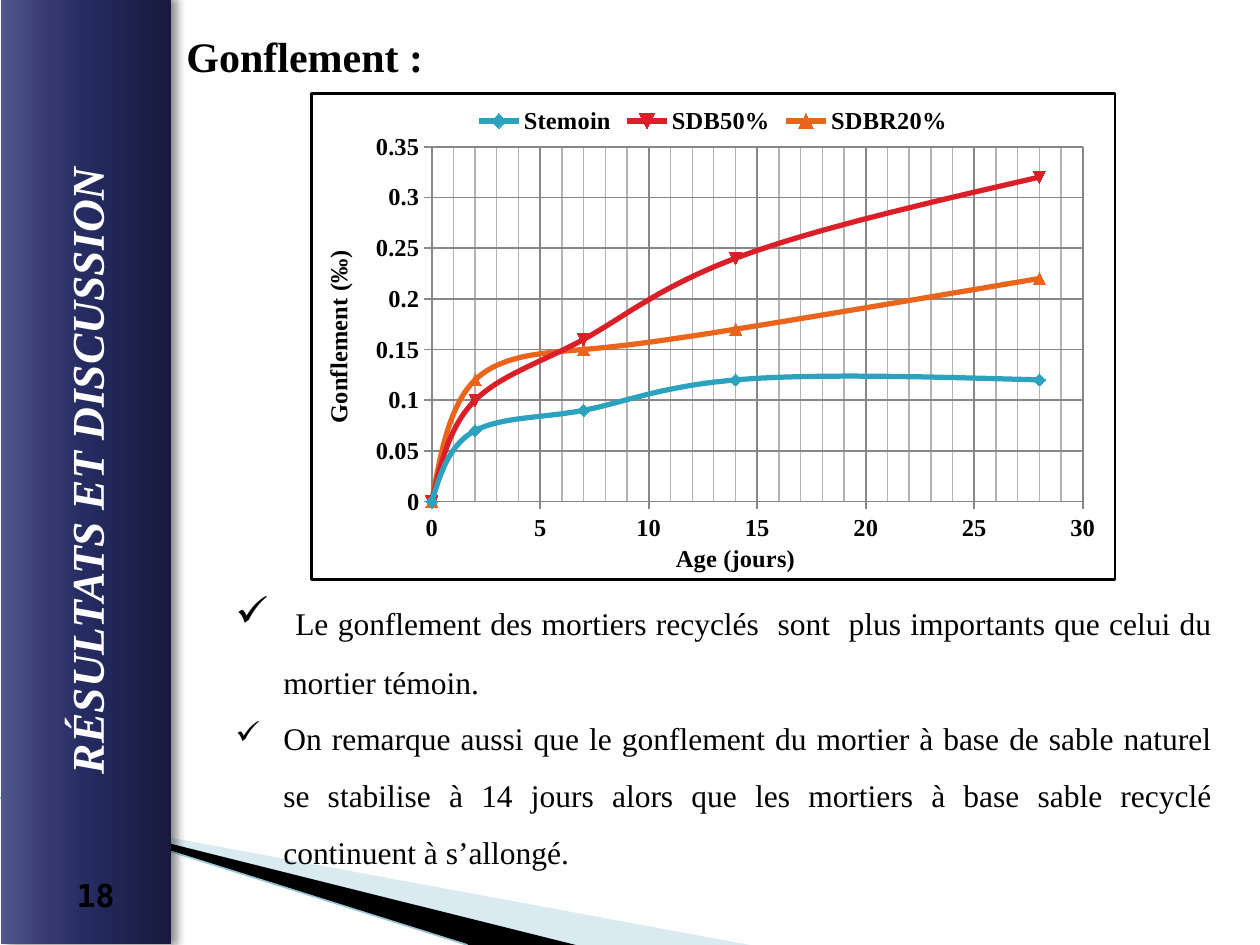
from lxml import etree
from pptx import Presentation, oxml, util as u
from pptx.chart import data
from pptx.dml import color
from pptx.enum import chart as ch, shapes, text
from pptx.oxml import ns

THEME = {
    "font": "Times New Roman", "mono": "DejaVu Sans Mono",
    "black": "000000", "white": "FFFFFF", "pale": "A0CBDC", "edge": "97C5D8",
    "grid": "878787", "minor": "B3B3B3",
    "banner": [(0, "51568D"), (30, "353970"), (50, "262B61"), (100, "171A3D")],
    "banner_pt": 26, "title_pt": 24, "chart_pt": 14, "body_pt": 18,
}
rgb = color.RGBColor.from_string
Inches = u.Inches


def add_run(p, words, size, name="black", font="font", bold=False, italic=False):
    r = p.add_run()
    r.text = words
    f = r.font
    f.name, f.size, f.bold, f.italic = THEME[font], u.Pt(size), bold, italic
    f.color.rgb = rgb(THEME[name])


def add_xml(parent, xml):
    """Append a fragment whose root tag carries no namespace declarations."""
    tag, rest = xml.split(">", 1)
    closed = tag.endswith("/")
    tag = tag.rstrip("/") + " " + ns.nsdecls("a", "c") + ("/>" if closed else ">")
    el = oxml.parse_xml(tag + rest)
    parent.append(el)
    return el


prs = Presentation()
prs.slide_width, prs.slide_height = Inches(10), Inches(7.5)
s = prs.slides.add_slide(prs.slide_layouts[5])

# Title
sp = s.shapes.title
sp.left, sp.top, sp.width, sp.height = Inches(1.38), Inches(0.19), Inches(2.1), Inches(0.5)
tf = sp.text_frame
tf.word_wrap = False
tf.auto_size = text.MSO_AUTO_SIZE.NONE
tf.vertical_anchor = text.MSO_ANCHOR.MIDDLE
p = tf.paragraphs[0]
p.alignment = text.PP_ALIGN.LEFT
add_run(p, "Gonflement :", THEME["title_pt"], bold=True)

# Corner wedges
wedges = [
    ("pale", [(0.55, 6.5), (5.95, 7.5), (4.56, 7.5)]),
    ("black", [(0.53, 6.49), (4.57, 7.5), (3.72, 7.5)]),
]
for name, points in wedges:
    corners = [(Inches(x), Inches(y)) for x, y in points]
    fb = s.shapes.build_freeform(*corners[0])
    fb.add_line_segments(corners[1:], close=True)
    sp = fb.convert_to_shape()
    sp.shadow.inherit = False
    sp.line.fill.background()
    sp.fill.solid()
    sp.fill.fore_color.rgb = rgb(THEME[name])
    if name == "pale":
        fill = sp._element.spPr.find(ns.qn("a:solidFill"))
        add_xml(fill[0], '<a:alpha val="40000"/>')

cn = s.shapes.add_connector(shapes.MSO_CONNECTOR.STRAIGHT,
                            Inches(0), Inches(6.33), Inches(3.71), Inches(7.5))
cn.line.color.rgb = rgb(THEME["edge"])
cn.line.width = u.Pt(0.95)
etree.SubElement(cn._element.spPr, ns.qn("a:effectLst"))

# Side banner, turned to read upwards
sp = s.shapes.add_shape(shapes.MSO_SHAPE.RECTANGLE,
                        Inches(-3.08), Inches(3.06), Inches(7.52), Inches(1.35))
sp.rotation = 270
sp.line.fill.background()
sp.fill.gradient()
sp.fill.gradient_angle = 270
stops = sp._element.spPr.find(".//" + ns.qn("a:gsLst"))
for stop in list(stops):
    stops.remove(stop)
for pos, value in THEME["banner"]:
    add_xml(stops, f'<a:gs pos="{pos * 1000}"><a:srgbClr val="{value}"/></a:gs>')
add_xml(sp._element.spPr,
        '<a:effectLst><a:outerShdw blurRad="63500" dist="38100" dir="0" rotWithShape="0">'
        f'<a:srgbClr val="{THEME["black"]}"><a:alpha val="45000"/></a:srgbClr>'
        '</a:outerShdw></a:effectLst>')
tf = sp.text_frame
tf.vertical_anchor = text.MSO_ANCHOR.MIDDLE
p = tf.paragraphs[0]
p.alignment = text.PP_ALIGN.CENTER
add_run(p, "RÉSULTATS ET DISCUSSION", THEME["banner_pt"], "white", bold=True, italic=True)

# Page number
sp = s.shapes.add_textbox(Inches(0.51), Inches(6.9), Inches(0.52), Inches(0.4))
sp.text_frame.word_wrap = False
add_run(sp.text_frame.paragraphs[0], "18", THEME["body_pt"], font="mono", bold=True)

# Swelling chart
ages = [0, 2, 7, 14, 28]
series = [
    ("Stemoin", [0, 0.07, 0.09, 0.12, 0.12], "2DA2BF", ch.XL_MARKER_STYLE.DIAMOND),
    ("SDB50%", [0, 0.1, 0.16, 0.24, 0.32], "DA1F28", None),
    ("SDBR20%", [0, 0.12, 0.15, 0.17, 0.22], "EB641B", ch.XL_MARKER_STYLE.TRIANGLE),
]
cd = data.XyChartData()
for name, values, _, _ in series:
    xy = cd.add_series(name)
    for age, value in zip(ages, values):
        xy.add_data_point(age, value)
chart = s.shapes.add_chart(ch.XL_CHART_TYPE.XY_SCATTER_SMOOTH, Inches(2.46), Inches(0.73),
                           Inches(6.4), Inches(3.88), cd).chart
chart.has_title = False
chart.font.name, chart.font.size, chart.font.bold = THEME["font"], u.Pt(THEME["chart_pt"]), True
chart.font.color.rgb = rgb(THEME["black"])
chart.has_legend = True
chart.legend.position = ch.XL_LEGEND_POSITION.TOP
chart.legend.include_in_layout = False
chart.plots[0].vary_by_categories = False

for i, (ser, (_, _, value, style)) in enumerate(zip(chart.plots[0].series, series)):
    # Automatic markers follow the series index; counting starts at 1 here
    ser._element.find(ns.qn("c:idx")).set("val", str(i + 1))
    # The scatter series keeps its smooth flag in XML only
    for old in ser._element.findall(ns.qn("c:smooth")):
        ser._element.remove(old)
    add_xml(ser._element, '<c:smooth val="1"/>')
    ser.format.line.color.rgb = rgb(value)
    ser.format.line.width = u.Pt(3)
    ser.marker.size = 7
    if style is not None:
        ser.marker.style = style
    ser.marker.format.fill.solid()
    ser.marker.format.fill.fore_color.rgb = rgb(value)
    ser.marker.format.line.color.rgb = rgb(value)

axes = [(chart.category_axis, "Age (jours)", 30, 5), (chart.value_axis, "Gonflement (‰)", 0.35, 0.05)]
for axis, title, top, step in axes:
    axis.minimum_scale, axis.maximum_scale, axis.major_unit = 0, top, step
    axis.major_tick_mark = ch.XL_TICK_MARK.OUTSIDE
    axis.tick_labels.number_format = "General"
    axis.tick_labels.number_format_is_linked = False
    axis.has_major_gridlines = True
    for line in (axis.format.line, axis.major_gridlines.format.line):
        line.color.rgb = rgb(THEME["grid"])
        line.width = u.Pt(1)
    add_run(axis.axis_title.text_frame.paragraphs[0], title, THEME["chart_pt"], bold=True)
ages_axis = chart.category_axis
ages_axis.minor_unit = 1
ages_axis.has_minor_gridlines = True
add_xml(ages_axis._element.find(ns.qn("c:minorGridlines")),
        f'<c:spPr><a:ln w="{u.Pt(0.75)}"><a:solidFill><a:srgbClr val="{THEME["minor"]}"/>'
        '</a:solidFill></a:ln></c:spPr>')

# Plot area place and chart border
area = chart._chartSpace.find(".//" + ns.qn("c:plotArea"))
for old in area.findall(ns.qn("c:layout")):
    area.remove(old)
place = "".join(f'<c:{k} val="{v}"/>' for k, v in [
    ("layoutTarget", "inner"), ("xMode", "edge"), ("yMode", "edge"),
    ("x", 0.15), ("y", 0.11), ("w", 0.81), ("h", 0.73)])
area.insert(0, add_xml(area, f"<c:layout><c:manualLayout>{place}</c:manualLayout></c:layout>"))
border = add_xml(chart._chartSpace,
                 f'<c:spPr><a:solidFill><a:srgbClr val="{THEME["white"]}"/></a:solidFill>'
                 f'<a:ln w="{u.Pt(1.5)}"><a:solidFill><a:srgbClr val="{THEME["black"]}"/>'
                 '</a:solidFill></a:ln></c:spPr>')
chart._chartSpace.find(ns.qn("c:chart")).addnext(border)

# Findings
findings = [
    [(" ", THEME["title_pt"]),
     ("Le gonflement des mortiers recyclés  sont  plus importants que celui du mortier témoin.",
      THEME["body_pt"])],
    [("On remarque aussi que le gonflement du mortier à base de sable naturel se stabilise à "
      "14 jours alors que les mortiers à base sable recyclé continuent à s’allongé.",
      THEME["body_pt"])],
]
sp = s.shapes.add_textbox(Inches(1.77), Inches(4.46), Inches(7.95), Inches(2.52))
tf = sp.text_frame
tf.word_wrap = True
for i, runs in enumerate(findings):
    p = tf.add_paragraph() if i else tf.paragraphs[0]
    p.alignment = text.PP_ALIGN.JUSTIFY
    p.line_spacing = 1.5
    pPr = p._p.get_or_add_pPr()
    pPr.set("marL", str(Inches(0.38)))
    pPr.set("indent", str(-Inches(0.38)))
    add_xml(pPr, '<a:buChar char="✓"/>')
    add_xml(pPr, f'<a:tabLst><a:tab pos="{Inches(0.55)}" algn="l"/></a:tabLst>')
    for words, size in runs:
        add_run(p, words, size)

prs.save("out.pptx")
